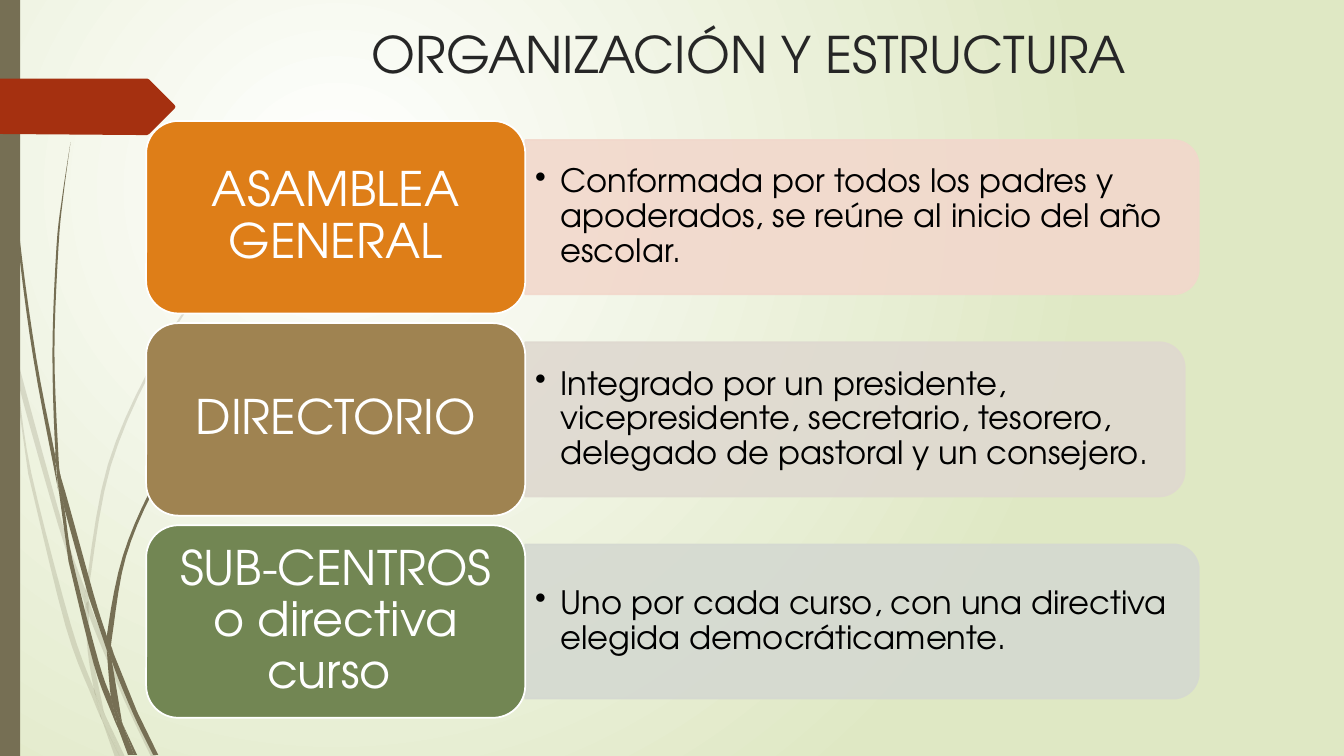
from dataclasses import dataclass

from lxml import etree
from pptx import Presentation
from pptx.dml.color import RGBColor
from pptx.enum.shapes import MSO_SHAPE
from pptx.enum.text import MSO_ANCHOR, PP_ALIGN
from pptx.oxml.ns import qn
from pptx.util import Inches, Pt

RECT, ROUND, TAB = (MSO_SHAPE.RECTANGLE, MSO_SHAPE.ROUNDED_RECTANGLE,
                    MSO_SHAPE.ROUND_2_SAME_RECTANGLE)
MIDDLE, TOP = MSO_ANCHOR.MIDDLE, MSO_ANCHOR.TOP
LEFT, CENTER = PP_ALIGN.LEFT, PP_ALIGN.CENTER


@dataclass(frozen=True)
class Theme:
    font: str = "TeX Gyre Adventor"
    title: int = 36
    head: int = 34
    body: int = 23
    line: float = 1.25
    ink: str = "262626"
    black: str = "000000"
    white: str = "FFFFFF"
    glow: str = "DFE8C4"
    stem: str = "766F54"
    flag: str = "A53010"


THEME = Theme()

# heading, detail, card colour, panel colour, panel width
ROWS = [
    ("ASAMBLEA GENERAL",
     "Conformada por todos los padres y apoderados, se reúne al inicio del año escolar.",
     "DE7E18", "F2D8CC", 6.68),
    ("DIRECTORIO",
     "Integrado por un presidente, vicepresidente, secretario, tesorero, "
     "delegado de pastoral y un consejero.",
     "9F8351", "DFD9D0", 6.54),
    ("SUB-CENTROS o directiva curso ",
     "Uno por cada curso, con una directiva elegida democráticamente.",
     "728653", "D5D9D1", 6.68),
]

# Each blade of grass: one edge out, the other edge back, in inches
PALE = [
    ([(.11, 3.5), (.09, 3.22), (0, 2.82)], [(0, 2.99), (.1, 3.44)]),
    ([(.14, 3.45), (.17, 3.76), (.58, 5.22), (.84, 5.99)],
     [(.85, 5.86), (.62, 5.2), (.14, 3.45)]),
    ([(.88, 5.96), (.88, 6.1), (1.23, 6.94), (1.5, 7.51)],
     [(1.55, 7.51), (1.27, 6.92), (.92, 6.07)]),
    ([(1.19, 7.51), (1.24, 7.51)], [(1.05, 7.11)]),
    ([(.93, 6.83), (.7, 6.19), (.31, 4.69), (.17, 3.76), (.11, 3.5)],
     [(.28, 4.7), (.65, 6.21), (.92, 6.93), (1.01, 7.14), (.99, 7.07)]),
    ([(.84, 5.99), (.87, 6.46), (.93, 6.83), (.96, 6.92), (1.05, 7.11)],
     [(1.03, 7.06), (.91, 6.46), (.88, 6.1), (.88, 6.08)]),
    ([(.88, 5.84), (1.1, 4.62), (1.6, 3.49), (2.29, 2.45), (2.68, 1.98),
      (2.9, 1.75), (3.12, 1.54)],
     [(3.12, 1.53), (2.89, 1.75), (2.68, 1.97), (2.28, 2.44), (1.58, 3.48),
      (1.07, 4.61), (.85, 5.84), (.85, 5.86), (.88, 5.96)]),
    ([(1.01, 7.14), (1.14, 7.51)], [(1.19, 7.51)]),
    ([(.88, 6.08), (.88, 6.1), (.88, 5.96)], [(.85, 5.86), (.84, 5.99)]),
    ([(.96, 6.92), (.93, 6.83), (.99, 7.07), (1.01, 7.14), (1.19, 7.51)],
     [(1.05, 7.11)]),
]
DARK = [
    ([(.07, 1.1), (.17, 2.33), (.33, 3.55), (.56, 4.77), (.57, 4.81)],
     [(.55, 4.57), (.55, 4.53), (.36, 3.55), (.19, 2.32), (.08, 1.09),
      (.05, .48), (.04, 0), (.03, 0), (.04, .48)]),
    ([(.88, 5.92), (1.06, 6.45)],
     [(1.06, 6.33), (1.06, 6.31), (.93, 5.9), (.6, 4.72), (.64, 5.05)]),
    ([(1.13, 6.49), (1.1, 6.41), (1.11, 6.56), (1.32, 7.08), (1.52, 7.49)],
     [(1.57, 7.49), (1.36, 7.06)]),
    ([(1.1, 6.91), (.98, 6.57), (.72, 5.56), (.64, 5.05), (.57, 4.77)],
     [(.68, 5.57), (.93, 6.59), (1.11, 7.08), (1.17, 7.22), (1.16, 7.17)]),
    ([(.6, 4.72), (.58, 4.53), (.54, 3.49), (.58, 2.45), (.63, 1.93), (.7, 1.41)],
     [(.7, 1.41), (.62, 1.93), (.56, 2.45), (.52, 3.49), (.55, 4.49), (.6, 4.72)]),
    ([(1.33, 7.49), (1.36, 7.49)], [(1.22, 7.19)]),
    ([(.57, 4.77), (.64, 5.05)], [(.6, 4.72), (.55, 4.49), (.55, 4.53)]),
    ([(1.11, 6.33), (1.25, 5.52), (1.58, 4.76), (2.05, 4.06), (2.31, 3.74),
      (2.45, 3.59), (2.61, 3.44)],
     [(2.6, 3.44), (2.45, 3.58), (2.31, 3.73), (2.04, 4.05), (1.56, 4.74),
      (1.22, 5.51), (1.06, 6.31), (1.1, 6.41)]),
    ([(1.17, 7.22), (1.27, 7.49)], [(1.31, 7.49)]),
    ([(1.06, 6.45), (1.1, 6.91), (1.16, 7.06), (1.22, 7.19)],
     [(1.21, 7.16), (1.11, 6.56), (1.09, 6.51)]),
    ([(1.06, 6.45), (1.09, 6.51), (1.11, 6.56)],
     [(1.1, 6.41), (1.06, 6.31), (1.06, 6.33)]),
    ([(1.16, 7.06), (1.1, 6.91), (1.16, 7.17), (1.17, 7.22), (1.3, 7.49)],
     [(1.33, 7.49), (1.22, 7.19)]),
]
FLAG = [(0, .78), (1.46, .78), (1.48, .79), (1.73, 1.04), (1.74, 1.06),
        (1.73, 1.08), (1.48, 1.33), (1.46, 1.34), (1.36, 1.34), (0, 1.33)]


def tint(part, color, alpha=100):
    """Colour a fill, with its opacity in per cent."""
    part.solid()
    part.fore_color.rgb = RGBColor.from_string(color)
    if alpha < 100:
        clr = part._xPr.find(".//" + qn("a:srgbClr"))
        etree.SubElement(clr, qn("a:alpha"), val=str(alpha * 1000))


def paint(shape, fill, line=None, alpha=100):
    shape.shadow.inherit = False
    tint(shape.fill, fill, alpha)
    if line:
        shape.line.width = Pt(THEME.line)
        tint(shape.line.fill, line, alpha)
    else:
        shape.line.fill.background()
    return shape


def block(shapes, kind, box, fill, line=None, alpha=100):
    shape = shapes.add_shape(kind, *map(Inches, box))
    return paint(shape, fill, line, alpha)


def write(shape, text, size, color, align=LEFT, anchor=TOP, pad=(.1, .05), lead=1.0):
    frame = shape.text_frame
    frame.word_wrap = True
    frame.vertical_anchor = anchor
    frame.margin_left = frame.margin_right = Inches(pad[0])
    frame.margin_top = frame.margin_bottom = Inches(pad[1])
    para = frame.paragraphs[0]
    para.alignment, para.line_spacing = align, lead
    run = para.add_run()
    run.text = text
    run.font.name, run.font.size = THEME.font, Pt(size)
    run.font.color.rgb = RGBColor.from_string(color)
    return para


def bullet(para):
    props = para._p.get_or_add_pPr()
    props.set("marL", str(Inches(.25)))
    props.set("indent", str(-Inches(.25)))
    etree.SubElement(props, qn("a:buChar"), char="•")


def curve(points, steps=5):
    """Smooth a line through its points (Catmull-Rom)."""
    ends = [points[0], *points, points[-1]]
    out = [points[0]]
    for a, b, c, d in zip(ends, ends[1:], ends[2:], ends[3:]):
        for t in (n / steps for n in range(1, steps + 1)):
            out.append(tuple(
                q + t * (r - p) / 2 + t * t * (2 * p - 5 * q + 4 * r - s) / 2
                + t ** 3 * (3 * q - p - 3 * r + s) / 2
                for p, q, r, s in zip(a, b, c, d)))
    return out


def outline(shapes, points, color, alpha=100):
    spots = [(Inches(x), Inches(y)) for x, y in points]
    pen = shapes.build_freeform(*spots[0])
    pen.add_line_segments(spots[1:], close=True)
    paint(pen.convert_to_shape(), color, alpha=alpha)


def grass(slide, blades, alpha):
    tuft = slide.shapes.add_group_shape().shapes
    for out, back in blades:
        outline(tuft, curve(out) + curve(back), THEME.stem, alpha)


def backdrop(slide):
    fill = slide.background.fill
    fill.gradient()
    for stop, color in zip(fill.gradient_stops, (THEME.white, THEME.glow)):
        stop.color.rgb = RGBColor.from_string(color)
    grad = fill._xPr.find(qn("a:gradFill"))
    grad.remove(grad.find(qn("a:lin")))
    ring = etree.SubElement(grad, qn("a:path"), {"path": "circle"})
    etree.SubElement(ring, qn("a:fillToRect"), l="50000", t="50000",
                     r="100000", b="100000")


def row(slide, top, head, text, color, pale, width):
    """Draw a heading card with its detail panel at the right."""
    shapes = slide.shapes
    left, wide, tall, deep = 1.45, 3.76, 1.91, 1.53
    edge, mid = left + wide, top + tall / 2
    box = (edge + (width - deep) / 2, mid - width / 2, deep, width)
    block(shapes, TAB, box, pale, pale, 90).rotation = 90
    note = shapes.add_textbox(*map(Inches, (edge, mid - .69, width - .08, 1.38)))
    bullet(write(note, text, THEME.body, THEME.black, anchor=MIDDLE, lead=.9))
    card = block(shapes, ROUND, (left, top, wide, tall), color, THEME.white)
    write(card, head, THEME.head, THEME.white, CENTER, MIDDLE, (.14, .07), .9)


def main():
    deck = Presentation()
    deck.slide_width, deck.slide_height = Inches(13.33), Inches(7.5)
    slide = deck.slides.add_slide(deck.slide_layouts[6])
    backdrop(slide)
    grass(slide, PALE, 20)
    grass(slide, DARK, 100)
    block(slide.shapes, RECT, (0, 0, .2, 7.5), THEME.stem)
    outline(slide.shapes, FLAG, THEME.flag)
    title = slide.shapes.add_textbox(*map(Inches, (3.59, .18, 9.74, 1.4)))
    write(title, "ORGANIZACIÓN Y ESTRUCTURA", THEME.title, THEME.ink)
    for n, item in enumerate(ROWS):
        row(slide, 1.2 + n * 1.91 * 1.05, *item)
    deck.save("out.pptx")


if __name__ == "__main__":
    main()
